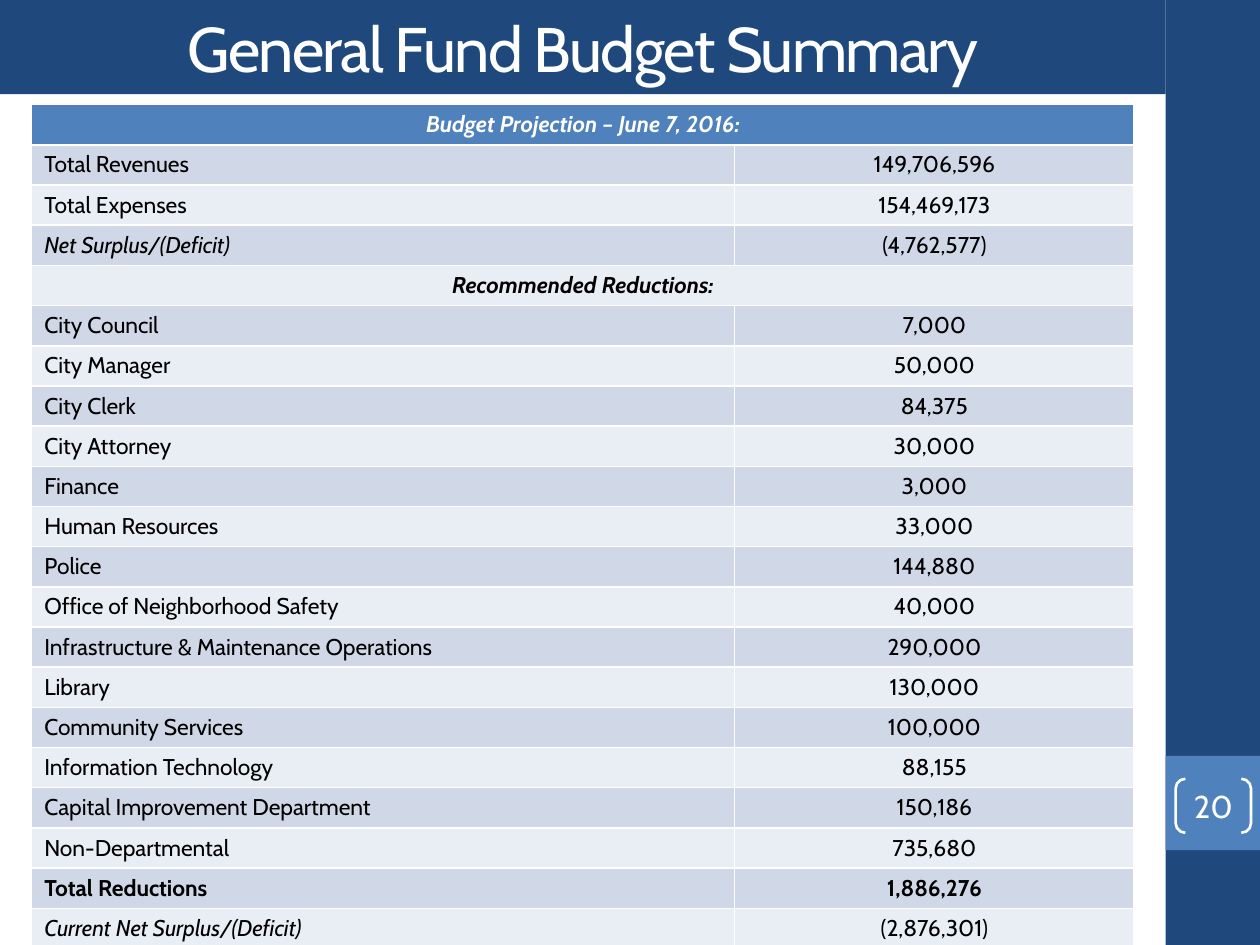
import dataclasses

import pptx
import pptx.dml.color
import pptx.enum.shapes
import pptx.enum.text
import pptx.util

Cm = pptx.util.Cm
Pt = pptx.util.Pt
Shapes = pptx.enum.shapes.MSO_SHAPE
Align = pptx.enum.text.PP_ALIGN
Anchor = pptx.enum.text.MSO_ANCHOR

FONT = "Cabin"
COLOURS = {
    "navy": "1F497D",
    "blue": "4F81BD",
    "dark_band": "D0D8E8",
    "light_band": "E9EDF4",
    "white": "FFFFFF",
    "black": "000000",
}


@dataclasses.dataclass
class Panel:
    left: float
    top: float
    width: float
    height: float
    colour: str


@dataclasses.dataclass
class BudgetRow:
    label: str
    amount: str = ""
    bold: bool = False
    italic_label: bool = False

    @property
    def is_heading(self) -> bool:
        return not self.amount


PANELS = [
    Panel(23.5, 0, 1.9, 19.05, "navy"),
    Panel(23.5, 15.24, 1.9, 1.9, "blue"),
]

BUDGET_ROWS = [
    BudgetRow("Budget Projection – June 7, 2016:", bold=True, italic_label=True),
    BudgetRow("Total Revenues", "149,706,596"),
    BudgetRow("Total Expenses", "154,469,173"),
    BudgetRow("Net Surplus/(Deficit)", "(4,762,577)", italic_label=True),
    BudgetRow("Recommended Reductions:", bold=True, italic_label=True),
    BudgetRow("City Council", "7,000"),
    BudgetRow("City Manager", "50,000"),
    BudgetRow("City Clerk", "84,375"),
    BudgetRow("City Attorney", "30,000"),
    BudgetRow("Finance", "3,000"),
    BudgetRow("Human Resources", "33,000"),
    BudgetRow("Police", "144,880"),
    BudgetRow("Office of Neighborhood Safety", "40,000"),
    BudgetRow("Infrastructure & Maintenance Operations", "290,000"),
    BudgetRow("Library", "130,000"),
    BudgetRow("Community Services", "100,000"),
    BudgetRow("Information Technology", "88,155"),
    BudgetRow("Capital Improvement Department", "150,186"),
    BudgetRow("Non-Departmental", "735,680"),
    BudgetRow("Total Reductions", "1,886,276", bold=True),
    BudgetRow("Current Net Surplus/(Deficit)", "(2,876,301)", italic_label=True),
]


def colour(name: str) -> pptx.dml.color.RGBColor:
    return pptx.dml.color.RGBColor.from_string(COLOURS[name])


def paint(target, name: str) -> None:
    target.fill.solid()
    target.fill.fore_color.rgb = colour(name)


def write(text_frame, text: str, size: float, colour_name: str, alignment=Align.CENTER,
          bold: bool = False, italic: bool = False):
    paragraph = text_frame.paragraphs[0]
    paragraph.alignment = alignment
    run = paragraph.add_run()
    run.text = text
    run.font.name = FONT
    run.font.size = Pt(size)
    run.font.bold = bold
    run.font.italic = italic
    run.font.color.rgb = colour(colour_name)
    return run


def draw_panel(slide, panel: Panel) -> None:
    shape = slide.shapes.add_shape(
        Shapes.RECTANGLE, Cm(panel.left), Cm(panel.top), Cm(panel.width), Cm(panel.height))
    shape.shadow.inherit = False
    paint(shape, panel.colour)
    shape.line.fill.background()


def draw_title(slide, text: str) -> None:
    title = slide.shapes.title
    title.left, title.top, title.width, title.height = Cm(0), Cm(0), Cm(23.5), Cm(1.9)
    paint(title, "navy")
    title.text_frame.auto_size = pptx.enum.text.MSO_AUTO_SIZE.NONE
    title.text_frame.vertical_anchor = Anchor.MIDDLE
    run = write(title.text_frame, text, 36, "white")
    run.font._element.set("spc", "-100")


def draw_page_number(slide, number: str) -> None:
    bracket = slide.shapes.add_shape(
        Shapes.DOUBLE_BRACKET, Cm(23.7), Cm(15.7), Cm(1.52), Cm(1.09))
    bracket.adjustments[0] = 0.18
    bracket.shadow.inherit = False
    bracket.fill.background()
    bracket.line.color.rgb = colour("white")
    bracket.line.width = Pt(1.5)
    frame = bracket.text_frame
    frame.margin_left = frame.margin_right = frame.margin_top = frame.margin_bottom = 0
    frame.vertical_anchor = Anchor.MIDDLE
    write(frame, number, 18, "white")


def draw_budget_table(slide, rows: list[BudgetRow]) -> None:
    table = slide.shapes.add_table(
        len(rows), 2, Cm(0.64), Cm(2.11), Cm(22.22), Cm(16.94)).table
    table.columns[0].width = Cm(14.17)
    table.columns[1].width = Cm(8.05)
    for index, row in enumerate(rows):
        band = "blue" if index == 0 else "dark_band" if index % 2 else "light_band"
        text_colour = "white" if index == 0 else "black"
        label_cell, amount_cell = table.cell(index, 0), table.cell(index, 1)
        paint(label_cell, band)
        paint(amount_cell, band)
        write(label_cell.text_frame, row.label, 13, text_colour,
              Align.CENTER if row.is_heading else Align.LEFT, row.bold, row.italic_label)
        if row.is_heading:
            label_cell.merge(amount_cell)
        else:
            write(amount_cell.text_frame, row.amount, 13, text_colour, bold=row.bold)


def main() -> None:
    presentation = pptx.Presentation()
    presentation.slide_width = Cm(25.4)
    presentation.slide_height = Cm(19.05)
    slide = presentation.slides.add_slide(presentation.slide_layouts[5])
    for panel in PANELS:
        draw_panel(slide, panel)
    draw_title(slide, "General Fund Budget Summary")
    draw_page_number(slide, "20")
    draw_budget_table(slide, BUDGET_ROWS)
    presentation.save("out.pptx")


if __name__ == "__main__":
    main()
